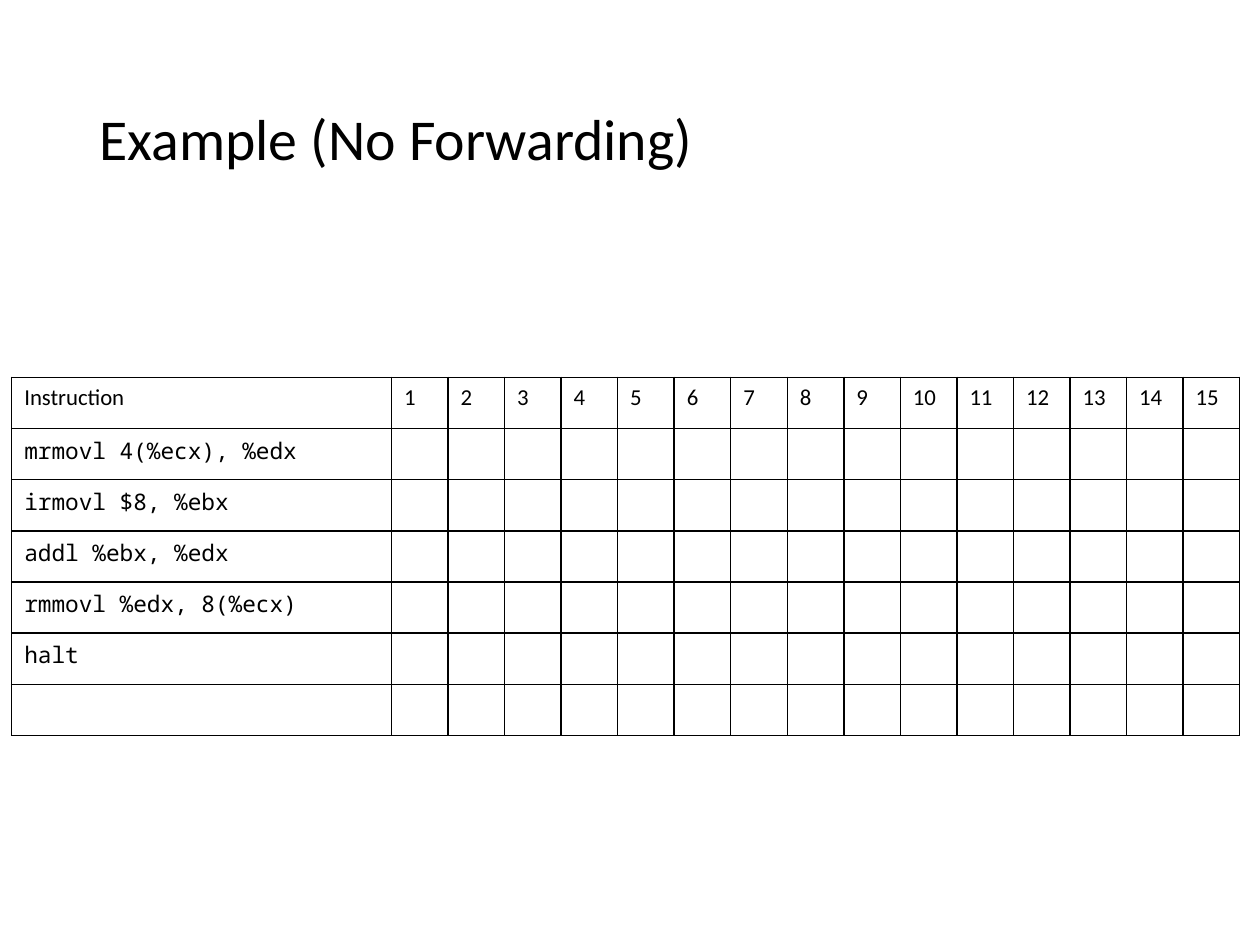
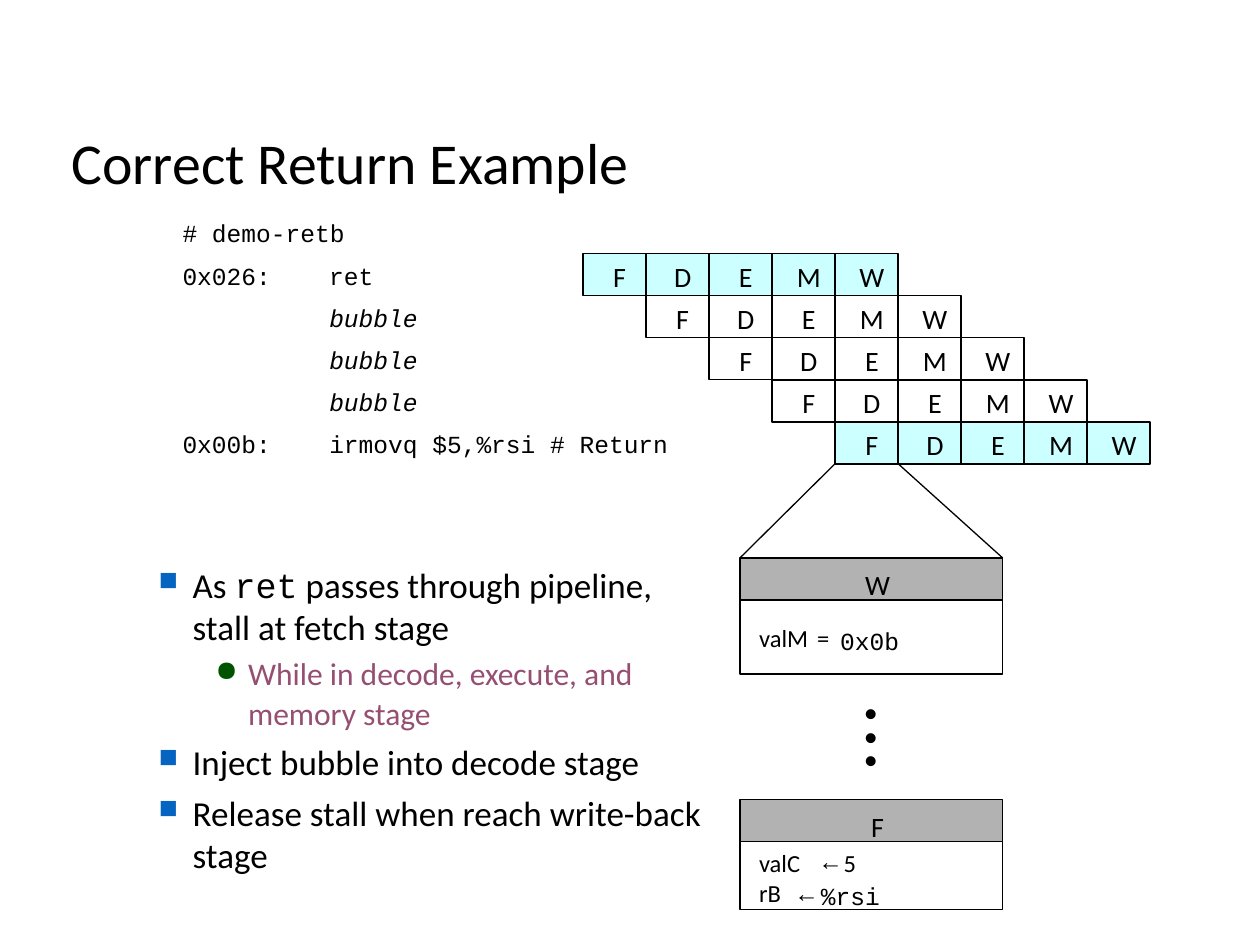
"""Build two slides on pipelining: an empty stage table and a return example."""
from lxml import etree
from pptx import Presentation
from pptx.dml.color import RGBColor
from pptx.enum import shapes, text
from pptx.oxml import ns
from pptx.util import Pt

COLORS = {"ink": "000000", "paper": "FFFFFF", "active": "CCFFFF", "header": "B2B2B2",
          "square": "0563C1", "dot": "005400", "detail": "954F72"}
SANS, CODE, MONO, ARROW = "Calibri", "Courier New", "Noto Sans Mono", "Arial"


def add_run(paragraph, words, size, font=SANS, color="ink", italic=False):
    run = paragraph.add_run()
    run.text = words
    run.font.size = Pt(size)
    run.font.name = font
    run.font.italic = italic
    run.font.color.rgb = RGBColor.from_string(COLORS[color])


def add_box(slide, bounds, fill=None, line=1, margins=(0, 0, 0, 0)):
    left, top, width, height = [Pt(value) for value in bounds]
    if fill:
        shape = slide.shapes.add_shape(shapes.MSO_SHAPE.RECTANGLE, left, top, width, height)
        shape.shadow.inherit = False
        shape.fill.solid()
        shape.fill.fore_color.rgb = RGBColor.from_string(COLORS[fill])
        shape.line.color.rgb = RGBColor.from_string(COLORS["ink"])
        shape.line.width = Pt(line)
    else:
        shape = slide.shapes.add_textbox(left, top, width, height)
    frame = shape.text_frame
    frame.word_wrap = True
    frame.margin_left, frame.margin_top, frame.margin_right, frame.margin_bottom = [
        Pt(value) for value in margins]
    return shape


presentation = Presentation()
presentation.slide_width, presentation.slide_height = Pt(719.4), Pt(539.4)
slides = []
for title, bounds in [("Example (No Forwarding)", (49.7, 28.8, 620, 104.4)),
                      ("Correct Return Example", (33.8, 64.1, 684.7, 61.2))]:
    slide = presentation.slides.add_slide(presentation.slide_layouts[6])
    slides.append(slide)
    frame = add_box(slide, bounds, margins=(7.2, 3.6, 7.2, 3.6)).text_frame
    frame.vertical_anchor = text.MSO_ANCHOR.MIDDLE
    frame.paragraphs[0].line_spacing = 0.9
    add_run(frame.paragraphs[0], title, 33)
table_slide, return_slide = slides

CYCLES = 15
ROW_HEIGHT = 29.2
instructions = ["mrmovl 4(%ecx), %edx", "irmovl $8, %ebx", "addl %ebx, %edx",
                "rmmovl %edx, 8(%ecx)", "halt", ""]
rows = [["Instruction"] + [str(cycle + 1) for cycle in range(CYCLES)]]
rows += [[instruction] + [""] * CYCLES for instruction in instructions]
table = table_slide.shapes.add_table(
    len(rows), CYCLES + 1, Pt(6.7), Pt(215.4), Pt(701.3), Pt(ROW_HEIGHT * len(rows))).table
table.first_row = table.horz_banding = False
for index, column in enumerate(table.columns):
    column.width = Pt(32.3 if index else 216.8)
for row_index, row in enumerate(rows):
    table.rows[row_index].height = Pt(ROW_HEIGHT)
    for column_index, words in enumerate(row):
        cell = table.cell(row_index, column_index)
        cell.fill.background()
        properties = cell._tc.get_or_add_tcPr()
        for position, side in enumerate(["lnL", "lnR", "lnT", "lnB"]):
            border = etree.Element(ns.qn("a:" + side), w=str(Pt(1)))
            fill = etree.SubElement(border, ns.qn("a:solidFill"))
            etree.SubElement(fill, ns.qn("a:srgbClr"), val=COLORS["ink"])
            properties.insert(position, border)
        if words:
            add_run(cell.text_frame.paragraphs[0], words, 13, MONO if row_index else SANS)

STEP_X, STEP_Y = 36, 24
code_lines = [("# demo-retb", "", False), ("0x026:", "ret", False), ("", "bubble", True),
              ("", "bubble", True), ("", "bubble", True),
              ("0x00b:", "irmovq $5,%rsi # Return", False)]
for index, (address, code, italic) in enumerate(code_lines):
    for words, left in [(address, 104.2), (code, 188)]:
        if words:
            bounds = (left, 124.7 + index * STEP_Y, len(words) * 8.4 + 4, 17)
            paragraph = add_box(return_slide, bounds).text_frame.paragraphs[0]
            add_run(paragraph, words, 14, CODE, italic=italic)

for row in range(5):
    for column, stage in enumerate("FDEMW"):
        bounds = (332.8 + (row + column) * STEP_X, 144.7 + row * STEP_Y, STEP_X, STEP_Y)
        fill = "active" if row in (0, 4) else "paper"
        shape = add_box(return_slide, bounds, fill, margins=(6, 2, 0, 0))
        paragraph = shape.text_frame.paragraphs[0]
        paragraph.alignment = text.PP_ALIGN.CENTER
        add_run(paragraph, stage, 16)

PANEL_LEFT, PANEL_WIDTH, PANEL_TOP = 422.5, 150, 318.5
for stage, top, height in [("W", PANEL_TOP, 42.2), ("F", 456.4, 38.8)]:
    header = add_box(return_slide, (PANEL_LEFT, top, PANEL_WIDTH, STEP_Y), "header", 0.75,
                     margins=(7, 6, 0, 0))
    paragraph = header.text_frame.paragraphs[0]
    paragraph.alignment = text.PP_ALIGN.CENTER
    add_run(paragraph, stage, 16)
    add_box(return_slide, (PANEL_LEFT, top + STEP_Y, PANEL_WIDTH, height), "paper")

for start, end in [(476.8, PANEL_LEFT), (512.8, PANEL_LEFT + PANEL_WIDTH)]:
    connector = return_slide.shapes.add_connector(
        shapes.MSO_CONNECTOR.STRAIGHT, Pt(start), Pt(264.7), Pt(end), Pt(PANEL_TOP))
    connector.line.color.rgb = RGBColor.from_string(COLORS["ink"])
    connector.line.width = Pt(0.75)
    etree.SubElement(connector._element.spPr, ns.qn("a:effectLst"))

labels = [("valM", 433.4, 355.7, 32, 14, SANS), ("=", 466.6, 355.7, 12, 14, SANS),
          ("0x0b", 479.7, 357.1, 38, 14, CODE),
          ("valC", 433.4, 483.8, 30, 14, SANS), ("←", 467.3, 483.1, 15, 14, ARROW),
          ("5", 481.7, 483.8, 10, 14, SANS),
          ("rB", 433.4, 501.1, 18, 14, SANS), ("←", 453.6, 501.1, 15, 14, ARROW),
          ("%rsi", 468.7, 502.6, 38, 14, CODE)]
labels += [("•", 493.2, 396.7 + 13.4 * index, 10, 16, SANS) for index in range(3)]
for words, left, top, width, size, font in labels:
    paragraph = add_box(return_slide, (left, top, width, 17)).text_frame.paragraphs[0]
    add_run(paragraph, words, size, font)

LEVELS = [dict(size=20, color="ink", left=58.3, indent=-19.4, before=5, spacing=1,
               bullet="■", bullet_color="square", bullet_size=75),
          dict(size=18, color="detail", left=90, indent=-18.7, before=1.8, spacing=1.07,
               bullet="●", bullet_color="dot", bullet_size=90)]
points = [(0, [("As ", SANS), ("ret", CODE),
               (" passes through pipeline, stall at fetch stage", SANS)]),
          (1, [("While in decode, execute, and memory stage", SANS)]),
          (0, [("Inject bubble into decode stage", SANS)]),
          (0, [("Release stall when reach write-back stage", SANS)])]
frame = add_box(return_slide, (44.6, 318.2, 365.8, 210.2),
                margins=(7.2, 3.6, 7.2, 3.6)).text_frame
for index, (level, runs) in enumerate(points):
    style = LEVELS[level]
    paragraph = frame.add_paragraph() if index else frame.paragraphs[0]
    paragraph.level = level
    paragraph.space_before = Pt(style["before"])
    paragraph.line_spacing = style["spacing"]
    properties = paragraph._p.get_or_add_pPr()
    properties.set("marL", str(Pt(style["left"])))
    properties.set("indent", str(Pt(style["indent"])))
    bullet_color = etree.SubElement(properties, ns.qn("a:buClr"))
    etree.SubElement(bullet_color, ns.qn("a:srgbClr"), val=COLORS[style["bullet_color"]])
    etree.SubElement(properties, ns.qn("a:buSzPct"), val=str(style["bullet_size"] * 1000))
    etree.SubElement(properties, ns.qn("a:buChar"), char=style["bullet"])
    for words, font in runs:
        add_run(paragraph, words, style["size"], font, style["color"])

presentation.save("out.pptx")
